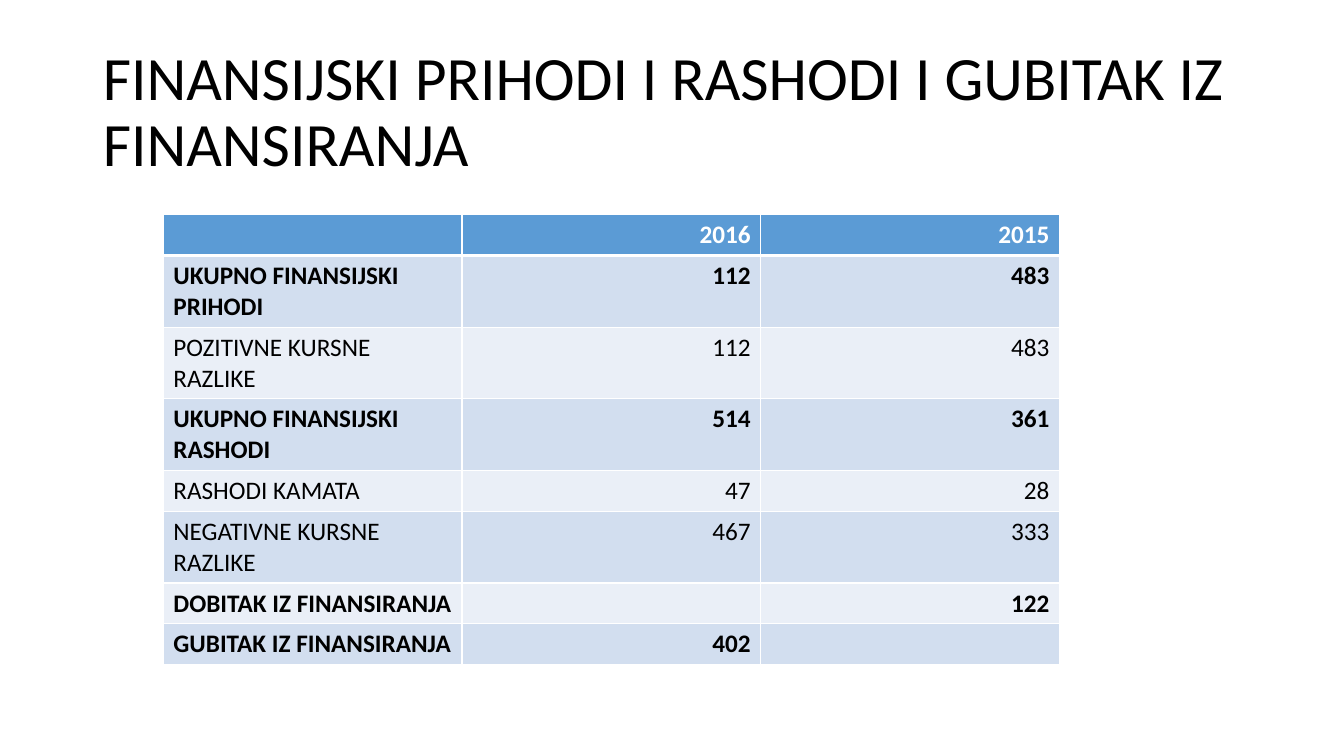
from dataclasses import dataclass

from lxml.etree import SubElement
from pptx import Presentation
from pptx.dml.color import RGBColor
from pptx.enum.text import MSO_ANCHOR, MSO_AUTO_SIZE, PP_ALIGN
from pptx.oxml.ns import qn
from pptx.util import Inches, Pt


@dataclass(frozen=True)
class Theme:
    font: str = "Calibri"
    ink: str = "000000"
    paper: str = "FFFFFF"
    header: str = "5B9BD5"
    bands: tuple = ("D2DEEF", "EAEFF7")
    title_size: int = 44
    table_size: int = 18
    rule: int = 1
    header_rule: int = 3


class SlideBuilder:
    def __init__(self, deck, theme):
        self.theme = theme
        self.width, self.height = deck.slide_width, deck.slide_height
        self.slide = deck.slides.add_slide(deck.slide_layouts[5])

    def box(self, left, top, width, height):
        return (round(left * self.width), round(top * self.height),
                round(width * self.width), round(height * self.height))

    def set_text(self, frame, text, size, color, bold, align):
        frame.text = text
        paragraph = frame.paragraphs[0]
        paragraph.alignment = align
        for run in paragraph.runs:
            run.font.name = self.theme.font
            run.font.size = Pt(size)
            run.font.bold = bold
            run.font.color.rgb = RGBColor.from_string(color)
        return paragraph

    def title(self, text, box):
        heading = self.slide.shapes.title
        heading.left, heading.top, heading.width, heading.height = self.box(*box)
        frame = heading.text_frame
        frame.word_wrap = True
        frame.auto_size = MSO_AUTO_SIZE.NONE
        frame.vertical_anchor = MSO_ANCHOR.MIDDLE
        paragraph = self.set_text(frame, text, self.theme.title_size,
                                  self.theme.ink, False, PP_ALIGN.LEFT)
        paragraph.line_spacing = 0.9

    def borders(self, cell, top, bottom):
        properties = cell._tc.get_or_add_tcPr()
        edges = {"a:lnL": self.theme.rule, "a:lnR": self.theme.rule,
                 "a:lnT": top, "a:lnB": bottom}
        for edge, points in edges.items():
            line = SubElement(properties, qn(edge), w=str(Pt(points)))
            paint = SubElement(line, qn("a:solidFill"))
            SubElement(paint, qn("a:srgbClr"), val=self.theme.paper)

    def table(self, rows, bold_rows, box):
        theme = self.theme
        grid = self.slide.shapes.add_table(
            len(rows), len(rows[0]), *self.box(*box)).table
        for r, values in enumerate(rows):
            is_header = r == 0
            fill = theme.header if is_header else theme.bands[(r - 1) % 2]
            color = theme.paper if is_header else theme.ink
            top = theme.header_rule if r == 1 else theme.rule
            bottom = theme.header_rule if is_header else theme.rule
            for c, value in enumerate(values):
                cell = grid.cell(r, c)
                self.borders(cell, top, bottom)
                cell.fill.solid()
                cell.fill.fore_color.rgb = RGBColor.from_string(fill)
                self.set_text(cell.text_frame, value, theme.table_size, color,
                              r in bold_rows,
                              PP_ALIGN.RIGHT if c else PP_ALIGN.LEFT)


FINANCES = [
    ("", "2016", "2015"),
    ("UKUPNO FINANSIJSKI PRIHODI", "112", "483"),
    ("POZITIVNE KURSNE RAZLIKE", "112", "483"),
    ("UKUPNO FINANSIJSKI RASHODI", "514", "361"),
    ("RASHODI KAMATA", "47", "28"),
    ("NEGATIVNE KURSNE RAZLIKE", "467", "333"),
    ("DOBITAK IZ FINANSIRANJA", "", "122"),
    ("GUBITAK IZ FINANSIRANJA", "402", ""),
]
BOLD_ROWS = {0, 1, 3, 6, 7}


def main():
    deck = Presentation()
    deck.slide_width, deck.slide_height = Inches(13.33), Inches(7.5)
    builder = SlideBuilder(deck, Theme())
    builder.title("FINANSIJSKI PRIHODI I RASHODI I GUBITAK IZ FINANSIRANJA",
                  (0.92 / 13.33, 0.4 / 7.5, 11.5 / 13.33, 1.45 / 7.5))
    builder.table(FINANCES, BOLD_ROWS,
                  (1.62 / 13.33, 2.13 / 7.5, 8.89 / 13.33, 3.24 / 7.5))
    deck.save("out.pptx")


if __name__ == "__main__":
    main()
